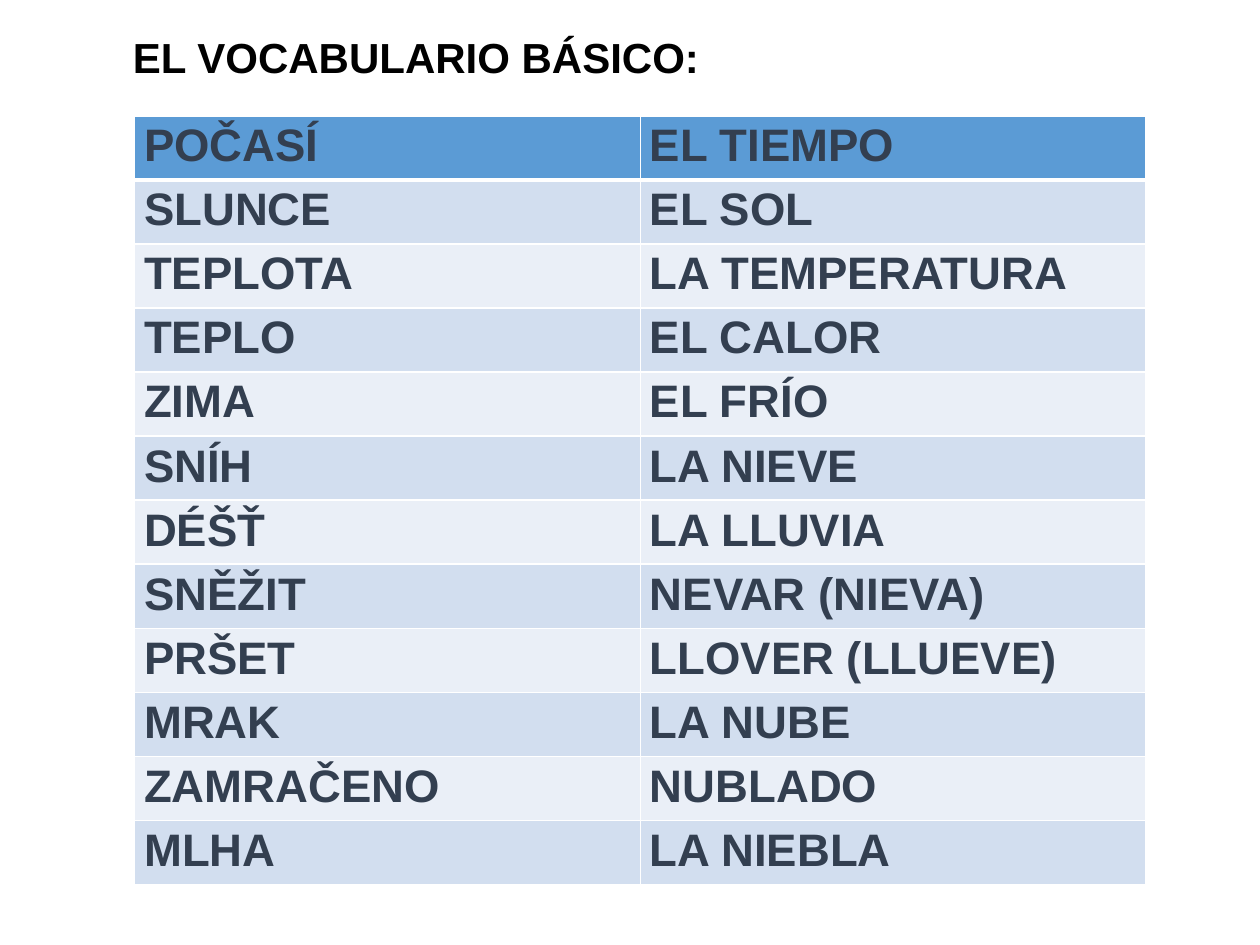
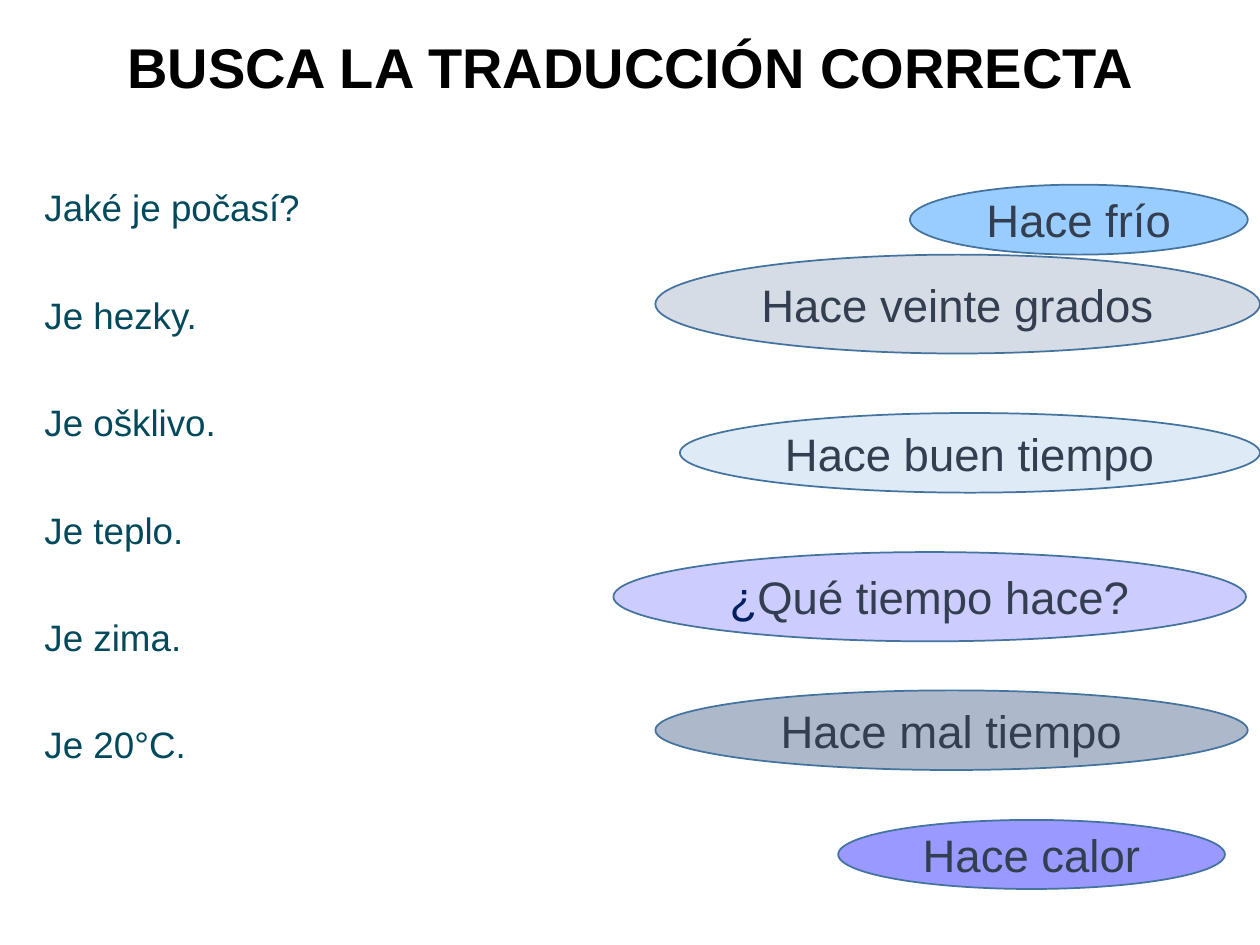
from pptx import Presentation
from pptx.dml.color import RGBColor
from pptx.enum.shapes import MSO_SHAPE
from pptx.enum.text import MSO_ANCHOR, PP_ALIGN
from pptx.oxml.ns import qn
from pptx.util import Pt
from lxml import etree

OVAL = MSO_SHAPE.OVAL
TOP, MIDDLE = MSO_ANCHOR.TOP, MSO_ANCHOR.MIDDLE
LEFT, CENTER = PP_ALIGN.LEFT, PP_ALIGN.CENTER
FONT = "Arial"
COLORS = {
    "title": "000000", "text": "333F50", "phrase": "03495C", "accent": "002060",
    "header": "5B9BD5", "odd_row": "D2DEEF", "even_row": "EAEFF7",
    "border": "FFFFFF", "outline": "43739E",
    "sky": "99CCFF", "mist": "D6DCE5", "ice": "DEEBF7",
    "lilac": "CCCCFF", "slate": "ADB9CA", "violet": "9999FF",
}


def format_text(text_frame, size, color, bold=False, align=LEFT, line_spacing=1.0):
    text_frame.margin_left = text_frame.margin_right = Pt(5.4)
    text_frame.margin_top = text_frame.margin_bottom = Pt(2.7)
    text_frame.word_wrap = True
    for paragraph in text_frame.paragraphs:
        paragraph.alignment = align
        paragraph.line_spacing = line_spacing
        for run in paragraph.runs:
            run.font.name = FONT
            run.font.size = Pt(size)
            run.font.bold = bold
            run.font.color.rgb = RGBColor.from_string(COLORS[color])


def add_text(slide, box, text, size, color, bold=False, align=LEFT, anchor=MIDDLE):
    text_frame = slide.shapes.add_textbox(*map(Pt, box)).text_frame
    text_frame.text = text
    text_frame.vertical_anchor = anchor
    format_text(text_frame, size, color, bold, align, 0.9)
    return text_frame


presentation = Presentation()
presentation.slide_width, presentation.slide_height = Pt(720), Pt(540)
blank_layout = presentation.slide_layouts[6]

# Slide 1: vocabulary table
slide = presentation.slides.add_slide(blank_layout)
add_text(slide, (70.5, 15, 544, 39), "EL VOCABULARIO BÁSICO:", 24, "title", bold=True)

vocabulary = [
    ("POČASÍ", "EL TIEMPO"),
    ("SLUNCE", "EL SOL"),
    ("TEPLOTA", "LA TEMPERATURA"),
    ("TEPLO", "EL CALOR"),
    ("ZIMA", "EL FRÍO"),
    ("SNÍH", "LA NIEVE"),
    ("DÉŠŤ", "LA LLUVIA"),
    ("SNĚŽIT", "NEVAR (NIEVA)"),
    ("PRŠET", "LLOVER (LLUEVE)"),
    ("MRAK", "LA NUBE"),
    ("ZAMRAČENO", "NUBLADO"),
    ("MLHA", "LA NIEBLA"),
]
row_height, column_width = 36.25, 289
table = slide.shapes.add_table(
    len(vocabulary), 2, Pt(77), Pt(66.25),
    Pt(2 * column_width), Pt(len(vocabulary) * row_height)).table
for column in table.columns:
    column.width = Pt(column_width)

for row_index, words in enumerate(vocabulary):
    table.rows[row_index].height = Pt(row_height)
    if row_index == 0:
        row_color = "header"
    else:
        row_color = "odd_row" if row_index % 2 else "even_row"
    for column_index, word in enumerate(words):
        cell = table.cell(row_index, column_index)
        cell.text = word
        format_text(cell.text_frame, 26, "text", bold=True)
        cell.margin_left = cell.margin_right = Pt(5.4)
        cell.margin_top = cell.margin_bottom = Pt(2.7)
        # Borders come before the fill; a thick line separates the header
        properties = cell._tc.get_or_add_tcPr()
        for side in ("lnL", "lnR", "lnT", "lnB"):
            below_header = (row_index, side) in ((0, "lnB"), (1, "lnT"))
            line = etree.SubElement(properties, qn("a:" + side),
                                    w=str(Pt(3 if below_header else 1)))
            line_fill = etree.SubElement(line, qn("a:solidFill"))
            etree.SubElement(line_fill, qn("a:srgbClr"), val=COLORS["border"])
        cell.fill.solid()
        cell.fill.fore_color.rgb = RGBColor.from_string(COLORS[row_color])

# Slide 2: matching exercise
slide = presentation.slides.add_slide(blank_layout)
add_text(slide, (36.5, 21, 648, 39), "BUSCA LA TRADUCCIÓN CORRECTA", 32, "title",
         bold=True, align=CENTER)

# Czech phrases
phrases = ["Jaké je počasí?", "Je hezky.", "Je ošklivo.", "Je teplo.", "Je zima.",
           "Je 20°C."]
phrase_frame = add_text(slide, (20, 106, 680, 425.5), "\n".join(phrases), 21, "phrase",
                        anchor=TOP)
for paragraph in phrase_frame.paragraphs[1:]:
    paragraph.space_before = Pt(38.7)

# Spanish translations: left, top, width, height, fill, text
translations = [
    (374.5, 145.5, 345.5, 56.5, "mist", "Hace veinte grados"),
    (388.5, 236, 331.5, 45.5, "ice", "Hace buen tiempo"),
    (520, 105.5, 193, 40, "sky", "Hace frío"),
    (479, 468.5, 221, 39.5, "violet", "Hace calor"),
    (350.5, 315.5, 361.5, 51, "lilac", "¿Qué tiempo hace?"),
    (374.5, 394.5, 338.5, 45.5, "slate", "Hace mal tiempo"),
]
for *box, fill, text in translations:
    ellipse = slide.shapes.add_shape(OVAL, *map(Pt, box))
    ellipse.shadow.inherit = False
    ellipse.fill.solid()
    ellipse.fill.fore_color.rgb = RGBColor.from_string(COLORS[fill])
    ellipse.line.color.rgb = RGBColor.from_string(COLORS["outline"])
    ellipse.line.width = Pt(1)
    text_frame = ellipse.text_frame
    text_frame.vertical_anchor = MIDDLE
    paragraph = text_frame.paragraphs[0]
    # The opening question mark is a run of its own
    opening = "¿" if text.startswith("¿") else ""
    for part in filter(None, (opening, text.removeprefix("¿"))):
        paragraph.add_run().text = part
    format_text(text_frame, 26, "text", align=CENTER)
    if opening:
        paragraph.runs[0].font.color.rgb = RGBColor.from_string(COLORS["accent"])

presentation.save("out.pptx")
